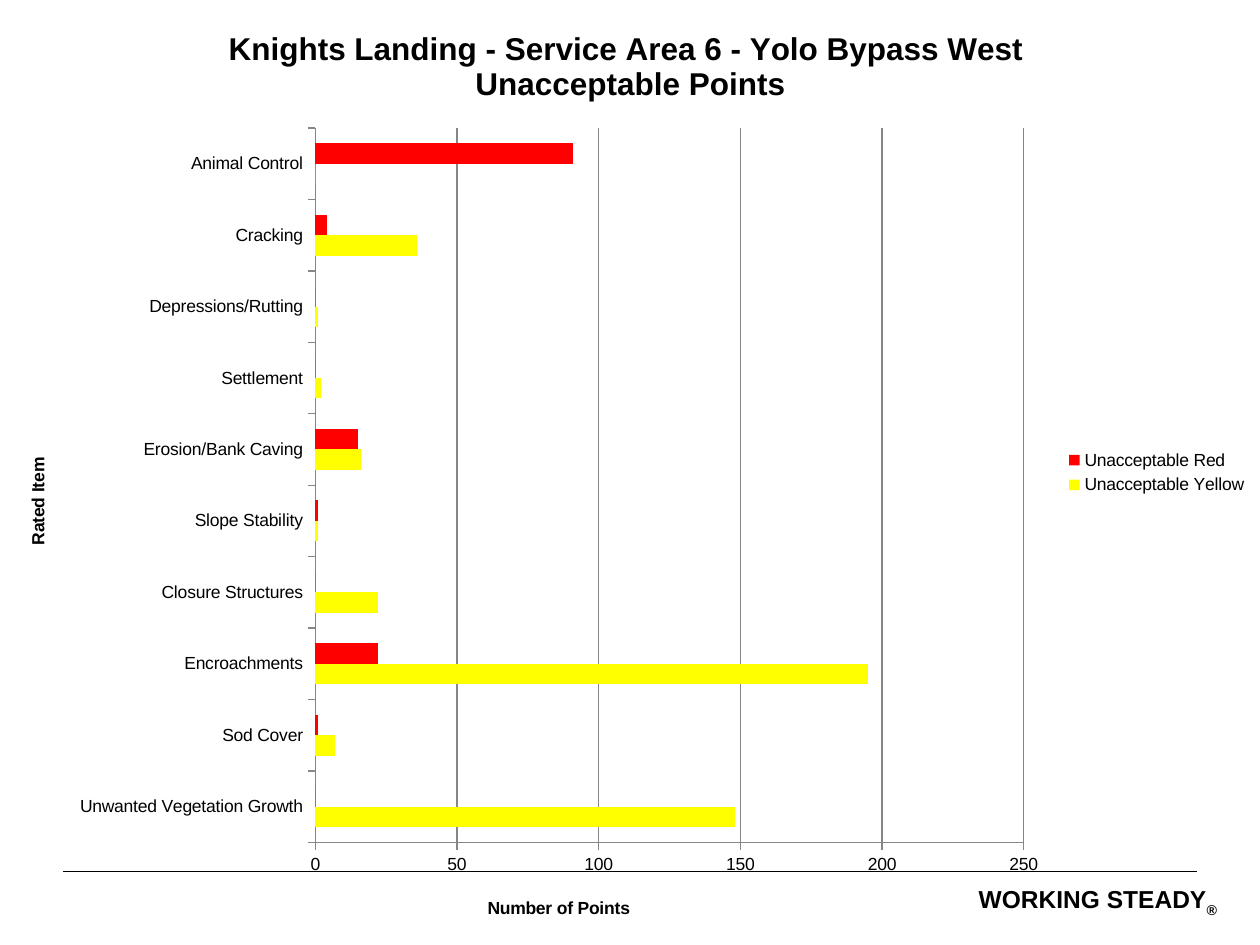
import lxml.etree
import pptx
import pptx.chart.data
import pptx.dml.color
import pptx.enum.chart
import pptx.enum.shapes
import pptx.enum.text
import pptx.oxml
import pptx.oxml.ns
import pptx.util

Pt = pptx.util.Pt
qn = pptx.oxml.ns.qn
WIDTH, HEIGHT = 720, 540
GRAY = "868686"
POINTS = {  # rated item: (yellow, red), from the bottom up
    "Unwanted Vegetation Growth": (148, 0),
    "Sod Cover": (7, 1),
    "Encroachments": (195, 22),
    "Closure Structures": (22, 0),
    "Slope Stability": (1, 1),
    "Erosion/Bank Caving": (16, 15),
    "Settlement": (2, 0),
    "Depressions/Rutting": (1, 0),
    "Cracking": (36, 4),
    "Animal Control": (0, 91),
}
SERIES_COLORS = {"Unacceptable Yellow": "FFFF00", "Unacceptable Red": "FF0000"}


def color(hex_string):
    return pptx.dml.color.RGBColor.from_string(hex_string)


def set_values(target, **values):
    for name, value in values.items():
        setattr(target, name, value)


def format_font(font, size, bold=False):
    set_values(font, name="Arial", size=Pt(size), bold=bold)
    font.color.rgb = color("000000")


def format_line(line, hex_string):
    line.color.rgb = color(hex_string)
    line.width = Pt(0.75)


def place(element, index, **points):
    """Give a part of the full-slide chart a manual layout, in points."""
    for old_layout in element.findall(qn("c:layout")):
        element.remove(old_layout)
    layout = lxml.etree.Element(qn("c:layout"))
    manual = lxml.etree.SubElement(layout, qn("c:manualLayout"))
    if "w" in points:
        lxml.etree.SubElement(manual, qn("c:layoutTarget")).set("val", "inner")
    for name in "xy":
        lxml.etree.SubElement(manual, qn(f"c:{name}Mode")).set("val", "edge")
    for name, value in points.items():
        fraction = value / (WIDTH if name in "xw" else HEIGHT)
        lxml.etree.SubElement(manual, qn(f"c:{name}")).set("val", str(fraction))
    element.insert(index, layout)


def no_fill():
    properties = lxml.etree.Element(qn("c:spPr"))
    lxml.etree.SubElement(properties, qn("a:noFill"))
    line = lxml.etree.SubElement(properties, qn("a:ln"))
    lxml.etree.SubElement(line, qn("a:noFill"))
    return properties


def write_title(title, lines, size, x, y):
    frame = title.text_frame
    for index, text in enumerate(lines):
        paragraph = frame.add_paragraph() if index else frame.paragraphs[0]
        run = paragraph.add_run()
        run.text = text
        format_font(run.font, size, bold=True)
    place(title._element, 1, x=x, y=y)


def add_footer(slide, left, top, width):
    rule = slide.shapes.add_connector(
        pptx.enum.shapes.MSO_CONNECTOR.STRAIGHT,
        Pt(left + width), Pt(top), Pt(left), Pt(top))
    format_line(rule.line, "000000")
    lxml.etree.SubElement(rule._element.spPr, qn("a:effectLst"))

    box = slide.shapes.add_textbox(
        Pt(left + width + 11.5 - 205), Pt(top + 7.2), Pt(205), Pt(16.6))
    frame = box.text_frame
    set_values(frame, word_wrap=True, margin_left=0, margin_right=0,
               margin_top=0, margin_bottom=0)
    paragraph = frame.paragraphs[0]
    paragraph.alignment = pptx.enum.text.PP_ALIGN.RIGHT
    for text in ("WORKING STEADY", "®"):
        run = paragraph.add_run()
        run.text = text
        format_font(run.font, 14, bold=True)
    run._r.get_or_add_rPr().set("baseline", "-25000")


def format_axis(axis, title, x, y):
    set_values(axis, major_tick_mark=pptx.enum.chart.XL_TICK_MARK.OUTSIDE,
               minor_tick_mark=pptx.enum.chart.XL_TICK_MARK.NONE)
    format_line(axis.format.line, GRAY)
    format_font(axis.tick_labels.font, 10)
    write_title(axis.axis_title, [title], 10, x, y)


def add_points_chart(slide, left, top, width, height):
    data = pptx.chart.data.CategoryChartData()
    data.categories = list(POINTS)
    for name, values in zip(SERIES_COLORS, zip(*POINTS.values())):
        data.add_series(name, values)
    chart = slide.shapes.add_chart(
        pptx.enum.chart.XL_CHART_TYPE.BAR_CLUSTERED,
        Pt(left), Pt(top), Pt(width), Pt(height), data).chart
    format_font(chart.font, 10)
    write_title(chart.chart_title,
                ["Knights Landing - Service Area 6 - Yolo Bypass West ",
                 "Unacceptable Points"], 18, 128.5, 14.5)

    plot = chart.plots[0]
    set_values(plot, gap_width=150, overlap=0, vary_by_categories=False)
    for series in plot.series:
        series.format.fill.solid()
        series.format.fill.fore_color.rgb = color(SERIES_COLORS[series.name])

    format_axis(chart.category_axis, "Rated Item", 13.3, 259.8)
    chart.category_axis.has_major_gridlines = False
    value_axis = chart.value_axis
    format_axis(value_axis, "Number of Points", 276.8, 510.7)
    set_values(value_axis, minimum_scale=0, maximum_scale=250, major_unit=50,
               has_major_gridlines=True)
    format_line(value_axis.major_gridlines.format.line, GRAY)

    chart.has_legend = True
    legend = chart.legend
    set_values(legend, include_in_layout=False,
               position=pptx.enum.chart.XL_LEGEND_POSITION.RIGHT)
    format_font(legend.font, 10)
    place(legend._element, 1, x=607.7, y=254.5)

    chart_element = chart._chartSpace.chart
    place(chart_element.plotArea, 0, x=180.2, y=73.2, w=404.8, h=408.2)
    chart_element.plotArea.append(no_fill())
    chart_element.addnext(no_fill())


def main():
    presentation = pptx.Presentation()
    set_values(presentation, slide_width=Pt(WIDTH), slide_height=Pt(HEIGHT))
    slide = presentation.slides.add_slide(presentation.slide_layouts[6])
    add_footer(slide, 36, 498.2, WIDTH - 2 * 36)
    add_points_chart(slide, 0, 0, WIDTH, HEIGHT)
    presentation.save("out.pptx")


if __name__ == "__main__":
    main()
